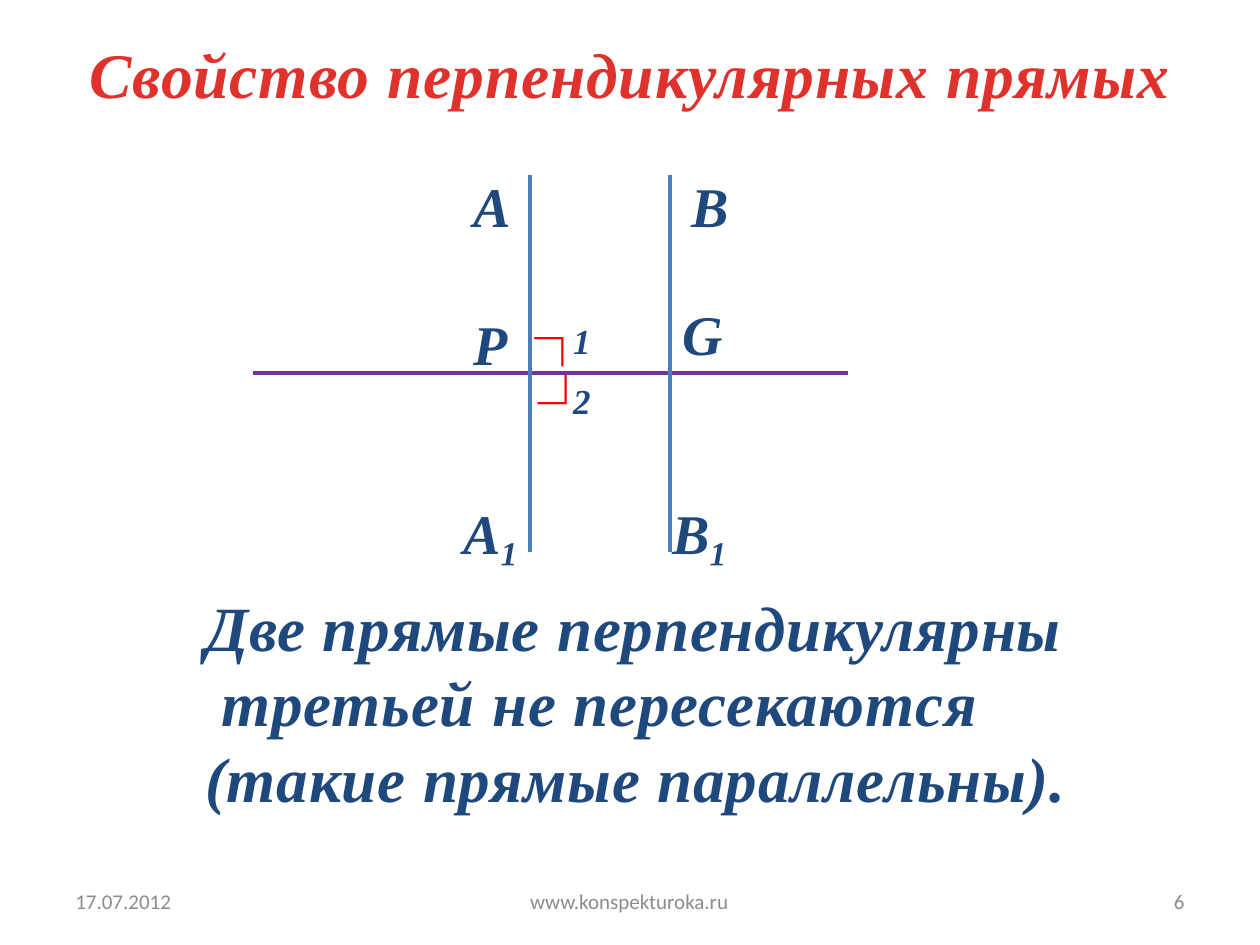
from lxml.etree import SubElement
from pptx import Presentation
from pptx.dml.color import RGBColor
from pptx.enum.shapes import MSO_CONNECTOR as Link
from pptx.enum.text import MSO_ANCHOR as Anchor, PP_ALIGN as Align
from pptx.oxml.ns import qn
from pptx.util import Pt

PX = 9144  # 100 px to the inch
SERIF, SANS = "Times New Roman", "Calibri"
NAVY, BLUE, PURPLE = "1F497D", "4B7EBC", "7030A0"
RED, CORAL, GRAY = "FF0000", "E0322D", "8C8C8C"


def paint(color, value):
    color.rgb = RGBColor.from_string(value)


def text(slide, box, lines, size, color, face=SERIF, bold=True, wrap=False,
         align=Align.LEFT, anchor=Anchor.TOP, track=0):
    """Add a text box; track is the letter spacing in hundredths of a point."""
    shape = slide.shapes.add_textbox(*(n * PX for n in box))
    frame = shape.text_frame
    frame.word_wrap, frame.vertical_anchor = wrap, anchor
    frame.text = "\n".join(lines)
    for par in frame.paragraphs:
        par.alignment = align
        font = par.font
        font.name, font.size = face, Pt(size)
        font.bold = font.italic = bold
        paint(font.color, color)
        if track:
            par._p.pPr.find(qn("a:defRPr")).set("spc", str(track))
    return shape


def line(slide, x1, y1, x2, y2, color):
    link = slide.shapes.add_connector(
        Link.STRAIGHT, *(n * PX for n in (x1, y1, x2, y2)))
    link.line.width = Pt(2.25)
    paint(link.line.color, color)
    SubElement(link._element.spPr, qn("a:effectLst"))


def title(slide, box):
    shape = text(slide, box, ["Свойство перпендикулярных прямых"], 36.3,
                 CORAL, wrap=True, align=Align.CENTER, track=50)
    shape.text_frame.paragraphs[0].line_spacing = 0.9


def theorem(slide, box):
    shape = text(slide, box, ["Две прямые перпендикулярны",
                              "третьей не пересекаются",
                              "(такие прямые параллельны)."],
                 36, NAVY, track=50)
    shape.text_frame.paragraphs[1]._p.pPr.set("marL", str(13 * PX))


def figure(slide, box):
    """Draw two lines perpendicular to a third, with points and angles."""
    left, top, width, height = box
    line(slide, left, top + 165, left + width, top + 165, PURPLE)
    for x in (220, 331):
        line(slide, left + x, top + height, left + x, top + 8, BLUE)

    points = [("G", 331, 102, 53), ("А", 165, 0, 50), ("P", 165, 110, 48),
              ("А₁", 157, 260, 68), ("В", 338, 0, 50), ("В₁", 323, 260, 68)]
    for name, x, y, wide in points:
        text(slide, (left + x, top + y, wide, 64), [name], 32, NAVY)

    for x, y, turn in ((205, 124, 180), (204, 150, 270)):
        mark = text(slide, (left + x, top + y, 59, 57), ["∟"], 28, RED)
        mark.rotation = turn
    for name, y in (("1", 118), ("2", 165)):
        text(slide, (left + 244, top + y, 34, 44), [name], 20, NAVY)


def footer(slide, box):
    left, top, width, height = box
    parts = [("17.07.2012", 0, 233, Align.LEFT),
             ("www.konspekturoka.ru", (width - 317) // 2, 317, Align.CENTER),
             ("6", width - 233, 233, Align.RIGHT)]
    for words, x, wide, align in parts:
        text(slide, (left + x, top, wide, height), [words], 12, GRAY, SANS,
             bold=False, wrap=True, align=align, anchor=Anchor.MIDDLE)


def main():
    deck = Presentation()
    deck.slide_width, deck.slide_height = 1000 * PX, 750 * PX
    slide = deck.slides.add_slide(deck.slide_layouts[6])
    footer(slide, (50, 695, 900, 40))
    title(slide, (50, 30, 900, 125))
    theorem(slide, (153, 462, 708, 192))
    figure(slide, (201, 131, 472, 307))
    deck.save("out.pptx")


if __name__ == "__main__":
    main()
